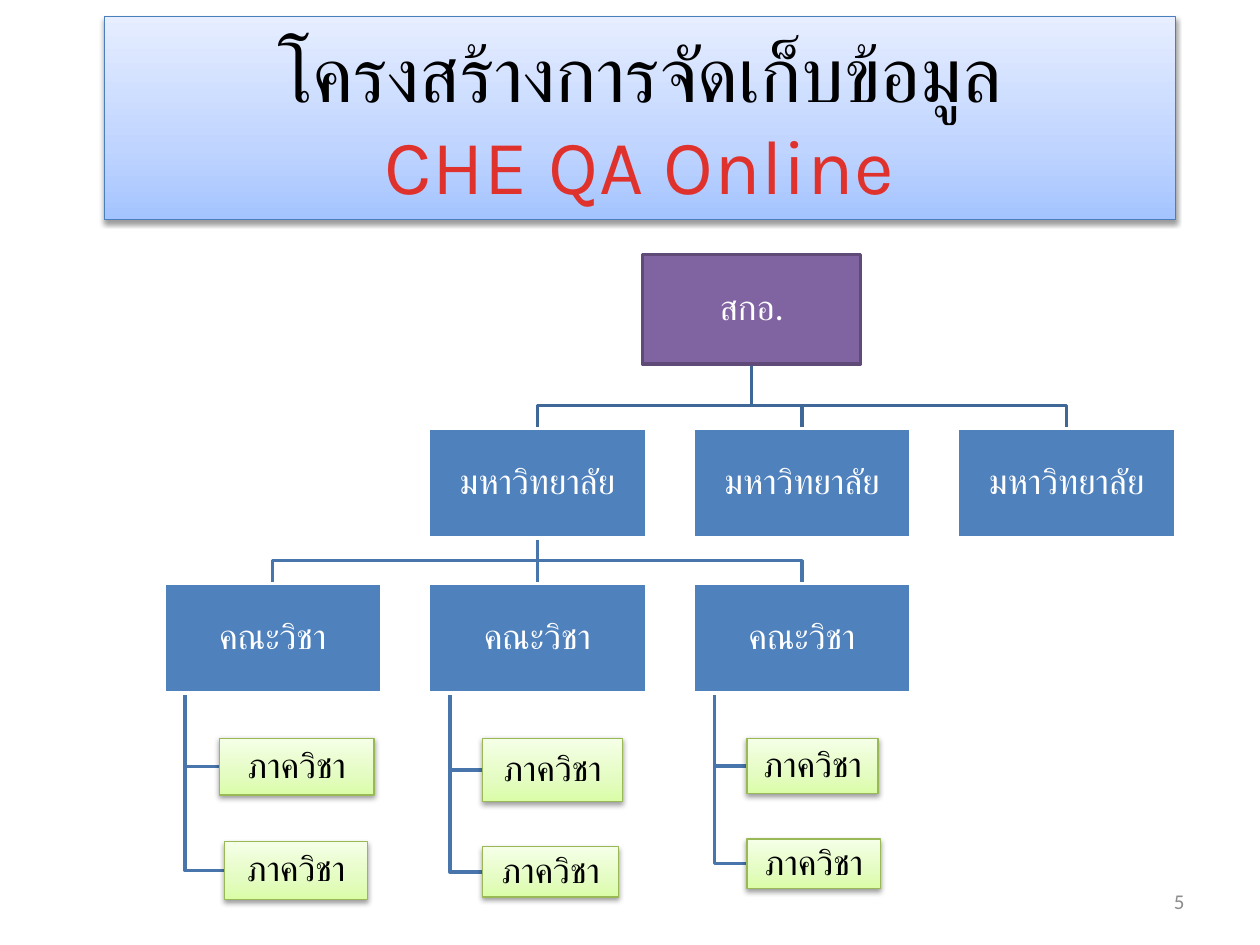
"""Build the slide on how the CHE QA Online data is structured."""
from lxml import etree
from pptx import Presentation
from pptx import util as u
from pptx.dml.color import RGBColor
from pptx.enum import shapes, text
from pptx.oxml import parse_xml
from pptx.oxml.ns import nsdecls, qn

TITLE = ("โครงสร้างการจัดเก็บข้อมูล", "CHE QA Online")
TITLE_AREA = (0.83, 0.13, 8.5, 1.61)
NUMBER, NUMBER_AREA = "5", (7.17, 6.95, 2.33, 0.4)

COMMISSION, UNIVERSITY = "สกอ.", "มหาวิทยาลัย"
FACULTY, DEPARTMENT = "คณะวิชา", "ภาควิชา"
DEPARTMENTS = [
    [(0.44, 5.86, 1.23, 0.45), (0.48, 6.68, 1.14, 0.46)],
    [(0.43, 5.86, 1.11, 0.5), (0.43, 6.72, 1.08, 0.4)],
    [(0.43, 5.86, 1.04, 0.44), (0.43, 6.66, 1.06, 0.39)],
]
GRID_LEFT, COLUMN, BOX_W, BOX_H = 1.3, 2.1, 1.73, 0.87
COMMISSION_LEFT, COMMISSION_TOP = 5.1, 2.02
UNIVERSITY_TOP, FACULTY_TOP = 3.4, 4.63
BRANCH_RISE, TRUNK_INDENT = 0.18, 0.17

BLUE_GLOW = [(0, "A4C4FF"), (35, "BFD4FF"), (100, "E6EEFF")]
GREEN_GLOW = [(0, "DAFDA7"), (35, "E4FCC2"), (100, "F5FFE7")]
STYLES = {
    "title": dict(fill=BLUE_GLOW, line="4B7EBC", weight=0.75),
    "commission": dict(fill="8064A2", line="5F4A78", weight=2, ink="FFFFFF"),
    "unit": dict(fill="4F81BD", line="FFFFFF", weight=2, ink="FFFFFF"),
    "department": dict(fill=GREEN_GLOW, line="98B955", weight=0.75, ink="000000"),
}
UPPER_LINK, LOWER_LINK = "3F6797", "4875AC"


def rgb(value):
    """Turn a hex string into a colour."""
    return RGBColor.from_string(value)


def assign(target, **values):
    """Set each named attribute on the target."""
    for name, value in values.items():
        setattr(target, name, value)


def emu(lengths):
    """Turn inches into slide units."""
    return [u.Inches(length) for length in lengths]


def add_glow(box, stops):
    """Give a box an upward gradient and a soft shadow below it."""
    marks = "".join(f'<a:gs pos="{share * 1000}"><a:srgbClr val="{colour}"/></a:gs>'
                    for share, colour in stops)
    gradient = parse_xml(f'<a:gradFill {nsdecls("a")} rotWithShape="1"><a:gsLst>{marks}'
                         '</a:gsLst><a:lin ang="16200000" scaled="0"/></a:gradFill>')
    effects = box._element.spPr.find(qn("a:effectLst"))
    box._element.spPr.find(qn("a:prstGeom")).addnext(gradient)
    effects.append(parse_xml(
        f'<a:outerShdw {nsdecls("a")} blurRad="40000" dist="20000" dir="5400000" '
        'rotWithShape="0"><a:srgbClr val="000000"><a:alpha val="38000"/></a:srgbClr>'
        '</a:outerShdw>'))


def add_box(slide, area, style):
    """Draw a rectangle in one of the styles."""
    box = slide.shapes.add_shape(shapes.MSO_SHAPE.RECTANGLE, *emu(area))
    box.shadow.inherit = False
    box.line.color.rgb = rgb(style["line"])
    box.line.width = u.Pt(style["weight"])
    if isinstance(style["fill"], str):
        box.fill.solid()
        box.fill.fore_color.rgb = rgb(style["fill"])
    else:
        add_glow(box, style["fill"])
    return box


def write(frame, words, size, ink, align, font="Calibri"):
    """Add a run to the first paragraph of a frame."""
    assign(frame, word_wrap=True, vertical_anchor=text.MSO_ANCHOR.MIDDLE)
    paragraph = frame.paragraphs[0]
    paragraph.alignment = align
    run = paragraph.add_run()
    run.text = words
    assign(run.font, name=font, size=u.Pt(size))
    run.font.color.rgb = rgb(ink)
    return run


def add_unit(slide, area, name, style):
    """Draw one labelled unit of the chart."""
    frame = add_box(slide, area, style).text_frame
    sides = ("left", "top", "right", "bottom")
    assign(frame, **{f"margin_{side}": u.Inches(0.01) for side in sides})
    write(frame, name, 20, style["ink"], text.PP_ALIGN.CENTER)
    assign(frame.paragraphs[0], line_spacing=0.9, space_after=u.Pt(7))


def add_link(slide, points, colour):
    """Draw a straight or bent line through the points."""
    start, *rest = [emu(point) for point in points]
    if all(x == start[0] for x, _ in rest):
        link = slide.shapes.add_connector(shapes.MSO_CONNECTOR.STRAIGHT, *start, *rest[-1])
        etree.SubElement(link._element.spPr, qn("a:effectLst"))
    else:
        builder = slide.shapes.build_freeform(*start)
        builder.add_line_segments(rest, close=False)
        link = builder.convert_to_shape()
        link.fill.background()
        link.shadow.inherit = False
    link.line.color.rgb = rgb(colour)
    link.line.width = u.Pt(2)


def add_branches(slide, parent_left, parent_top, lefts, top, colour):
    """Link a parent to each child in the row below it."""
    stem, bend = parent_left + BOX_W / 2, top - BRANCH_RISE
    for left in lefts:
        middle = left + BOX_W / 2
        add_link(slide, [(stem, parent_top + BOX_H), (stem, bend),
                         (middle, bend), (middle, top)], colour)


def main():
    """Lay out the title, the chart and the slide number."""
    deck = Presentation()
    assign(deck, slide_width=u.Inches(10), slide_height=u.Inches(7.5))
    slide = deck.slides.add_slide(deck.slide_layouts[6])

    heading = add_box(slide, TITLE_AREA, STYLES["title"]).text_frame
    center = text.PP_ALIGN.CENTER
    write(heading, TITLE[0], 44, "000000", center)
    heading.paragraphs[0].add_line_break()
    system = write(heading, TITLE[1], 44, "E0322D", center, "Karla")
    system.font._element.set("spc", "50")

    columns = [GRID_LEFT + COLUMN * i for i in range(4)]
    faculties, universities = columns[:3], columns[1:]
    departments = [(left, (left + indent, top, width, height))
                   for left, group in zip(faculties, DEPARTMENTS)
                   for indent, top, width, height in group]

    add_branches(slide, COMMISSION_LEFT, COMMISSION_TOP, universities,
                 UNIVERSITY_TOP, UPPER_LINK)
    add_branches(slide, universities[0], UNIVERSITY_TOP, faculties,
                 FACULTY_TOP, LOWER_LINK)
    for faculty, (left, top, _, height) in departments:
        trunk, middle = faculty + TRUNK_INDENT, top + height / 2
        add_link(slide, [(trunk, FACULTY_TOP + BOX_H), (trunk, middle),
                         (left, middle)], LOWER_LINK)

    add_unit(slide, (COMMISSION_LEFT, COMMISSION_TOP, BOX_W, BOX_H),
             COMMISSION, STYLES["commission"])
    for name, lefts, top in ((UNIVERSITY, universities, UNIVERSITY_TOP),
                             (FACULTY, faculties, FACULTY_TOP)):
        for left in lefts:
            add_unit(slide, (left, top, BOX_W, BOX_H), name, STYLES["unit"])
    for _, area in departments:
        add_unit(slide, area, DEPARTMENT, STYLES["department"])

    number = slide.shapes.add_textbox(*emu(NUMBER_AREA)).text_frame
    write(number, NUMBER, 12, "8C8C8C", text.PP_ALIGN.RIGHT)
    deck.save("out.pptx")


if __name__ == "__main__":
    main()
